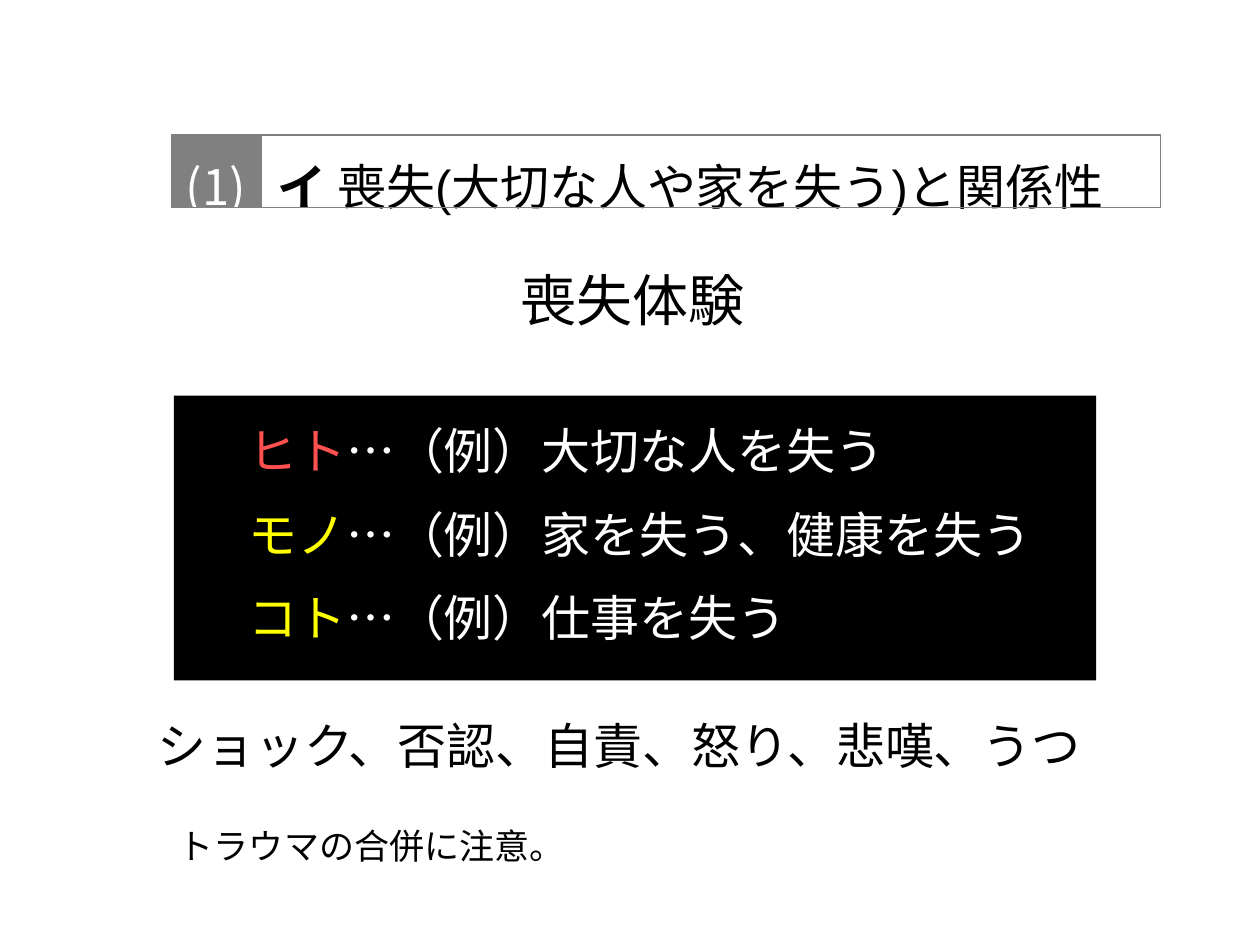
from dataclasses import dataclass

from lxml import etree
from pptx import Presentation
from pptx import util as u
from pptx.dml.color import RGBColor
from pptx.enum import shapes, text
from pptx.oxml import ns


@dataclass(frozen=True)
class Theme:
    font: str = "Noto Sans CJK JP"
    latin: str = "Arial"
    black: str = "000000"
    white: str = "FFFFFF"
    grey: str = "808080"
    yellow: str = "FFFF00"
    red: str = "FF5050"
    heading: int = 32
    body: int = 28
    note: int = 20
    line_gap: int = 14
    border: int = 1


class LossPage:
    COLUMNS, ROWS = 100, 75

    def __init__(self, deck, theme):
        self.deck, self.theme = deck, theme
        self.page = deck.slides.add_slide(deck.slide_layouts[5])

    def area(self, column, row, columns, rows):
        across = self.deck.slide_width / self.COLUMNS
        down = self.deck.slide_height / self.ROWS
        return [u.Emu(round(n * step)) for n, step in
                ((column, across), (row, down), (columns, across), (rows, down))]

    def apply(self, target, values):
        for name, value in values.items():
            setattr(target, name, value)

    def paint(self, fill, color):
        fill.solid()
        fill.fore_color.rgb = RGBColor.from_string(color)

    def margins(self, target, left, top, right, bottom):
        sides = dict(left=left, top=top, right=right, bottom=bottom)
        self.apply(target, {f"margin_{side}": u.Inches(size) for side, size in sides.items()})

    def add_lines(self, frame, lines, size, align=text.PP_ALIGN.LEFT):
        for number, spans in enumerate(lines):
            para = frame.paragraphs[0] if number == 0 else frame.add_paragraph()
            gap = u.Pt(self.theme.line_gap if number else 0)
            self.apply(para, dict(alignment=align, space_before=gap))
            for words, color, *extra in spans:
                span = para.add_run()
                span.text = words
                values = dict(name=self.theme.font, size=u.Pt(size), bold=False)
                self.apply(span.font, values | (extra[0] if extra else {}))
                span.font.color.rgb = RGBColor.from_string(color)
                props = span._r.get_or_add_rPr()
                east = etree.Element(ns.qn("a:ea"), typeface=self.theme.font)
                props.find(ns.qn("a:latin")).addnext(east)

    def title(self, words, *place):
        box = self.page.shapes.title
        self.apply(box, dict(zip(("left", "top", "width", "height"), self.area(*place))))
        self.apply(box.text_frame, dict(word_wrap=True, auto_size=text.MSO_AUTO_SIZE.NONE,
                                        vertical_anchor=text.MSO_ANCHOR.MIDDLE))
        self.add_lines(box.text_frame, [[(words, self.theme.black)]],
                       self.theme.heading, text.PP_ALIGN.CENTER)

    def label(self, words, size, *place):
        frame = self.page.shapes.add_textbox(*self.area(*place)).text_frame
        frame.word_wrap = True
        self.margins(frame, 0.04, 0.04, 0.04, 0.04)
        self.add_lines(frame, [[(words, self.theme.black)]], size)

    def panel(self, lines, *place):
        box = self.page.shapes.add_shape(shapes.MSO_SHAPE.RECTANGLE, *self.area(*place))
        box.shadow.inherit = False
        self.paint(box.fill, self.theme.black)
        box.line.fill.background()
        self.apply(box.text_frame, dict(word_wrap=True, vertical_anchor=text.MSO_ANCHOR.TOP))
        self.margins(box.text_frame, 0.59, 0.2, 0.2, 0.2)
        self.add_lines(box.text_frame, lines, self.theme.body)

    def outline(self, cell):
        props = cell._tc.get_or_add_tcPr()
        for place, side in enumerate(("lnL", "lnR", "lnT", "lnB")):
            line = etree.Element(ns.qn(f"a:{side}"), w=str(u.Pt(self.theme.border)))
            fill = etree.SubElement(line, ns.qn("a:solidFill"))
            etree.SubElement(fill, ns.qn("a:srgbClr"), val=self.theme.grey)
            props.insert(place, line)

    def banner(self, cells, widths, *place):
        table = self.page.shapes.add_table(1, len(cells), *self.area(*place)).table
        self.apply(table, dict(first_row=False, horz_banding=False))
        for number, (spans, color, indent, align) in enumerate(cells):
            table.columns[number].width = self.area(0, 0, widths[number], 0)[2]
            cell = table.cell(0, number)
            self.paint(cell.fill, color)
            self.margins(cell, indent, 0.11, 0.04, 0)
            self.add_lines(cell.text_frame, [spans], self.theme.body, align)
            self.outline(cell)


def main():
    deck = Presentation()
    deck.slide_width, deck.slide_height = u.Inches(10), u.Inches(7.5)
    theme = Theme()
    page = LossPage(deck, theme)

    page.title("喪失体験", 34.1, 19.4, 32.3, 8.7)
    losses = (
        ("ヒト", theme.red, "大切な人を失う"),
        ("モノ", theme.yellow, "家を失う、健康を失う"),
        ("コト", theme.yellow, "仕事を失う"),
    )
    page.panel([[(kind, color), (f"…（例）{example}", theme.white)]
                for kind, color, example in losses], 13.8, 31.4, 73.2, 22.6)
    page.label("ショック、否認、自責、怒り、悲嘆、うつ", theme.body, 12.1, 56.4, 76.4, 5.5)
    page.label("トラウマの合併に注意。", theme.note, 13.8, 65, 56.7, 4.1)

    heading = [("イ ", theme.black, dict(bold=True)),
               ("喪失(大切な人や家を失う)と関係性", theme.black, dict(name=theme.latin))]
    page.banner([([("(1)", theme.white)], theme.grey, 0.04, text.PP_ALIGN.CENTER),
                 (heading, theme.white, 0.13, text.PP_ALIGN.LEFT)],
                (7.1, 71.4), 13.6, 10.7, 78.5, 5.5)
    deck.save("out.pptx")


if __name__ == "__main__":
    main()
